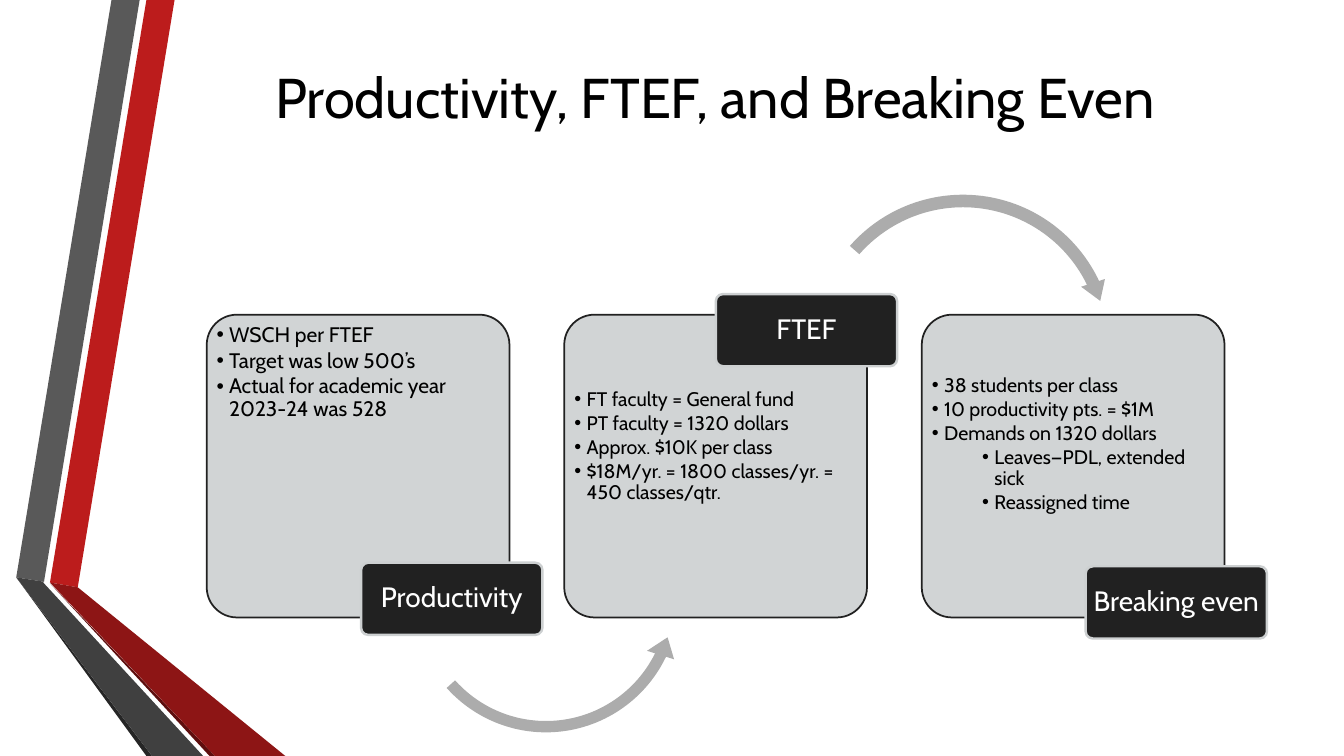
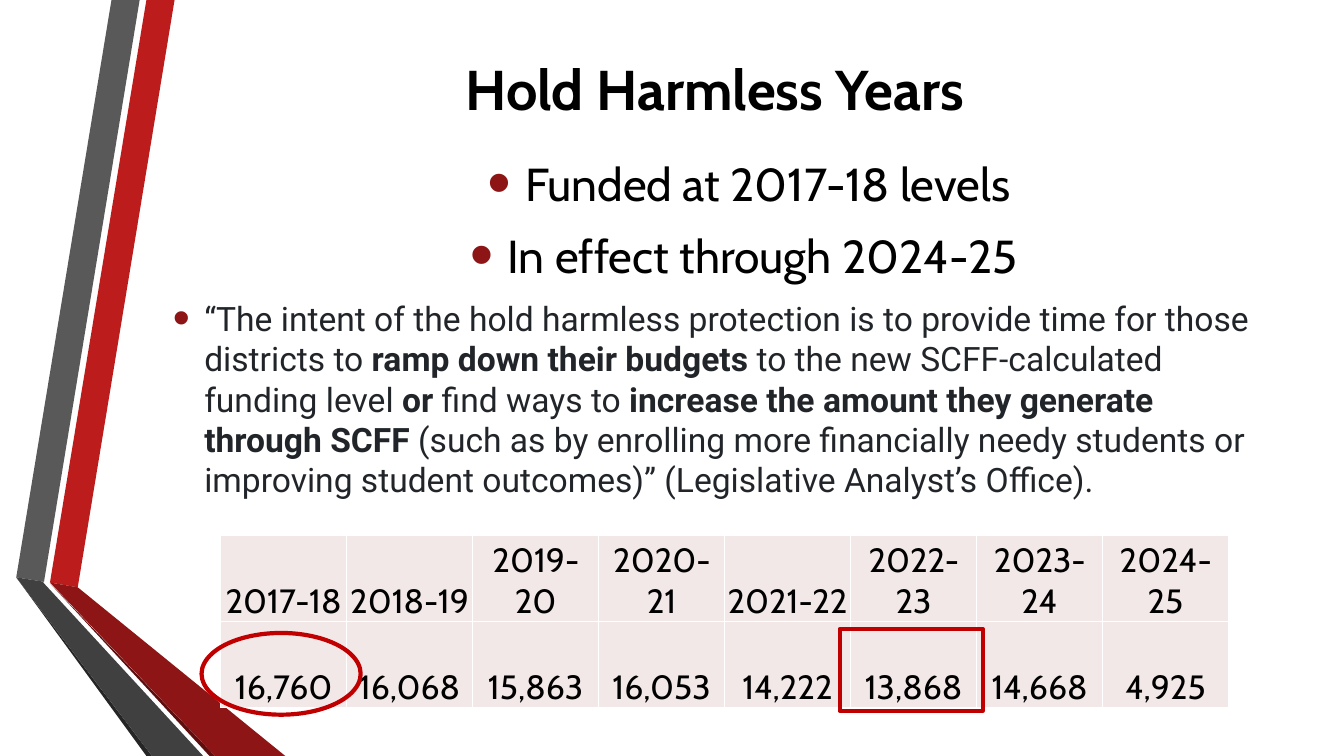
from dataclasses import dataclass
from typing import Any

import pptx
import pptx.dml.color
import pptx.enum.shapes
import pptx.enum.text
import pptx.oxml
import pptx.oxml.ns
import pptx.util

Cm = pptx.util.Cm
Pt = pptx.util.Pt
RGBColor = pptx.dml.color.RGBColor
Preset = pptx.enum.shapes.MSO_SHAPE
Align = pptx.enum.text.PP_ALIGN
Anchor = pptx.enum.text.MSO_ANCHOR

# Theme
BLACK = RGBColor(0x00, 0x00, 0x00)
WHITE = RGBColor(0xFF, 0xFF, 0xFF)
RED = RGBColor(0xBC, 0x1C, 0x1C)
MAROON = RGBColor(0x8D, 0x15, 0x15)
MAROON_EDGE = RGBColor(0x5E, 0x0E, 0x0E)
GREY = RGBColor(0x59, 0x59, 0x59)
CHARCOAL = RGBColor(0x40, 0x40, 0x40)
CHARCOAL_EDGE = RGBColor(0x26, 0x26, 0x26)
CARD_GREY = RGBColor(0xCD, 0xD0, 0xD1)
TAG_BLACK = RGBColor(0x21, 0x21, 0x21)
ARROW_GREY = RGBColor(0xAC, 0xAC, 0xAC)
QUOTE_INK = RGBColor(0x21, 0x25, 0x29)
CELL_PINK = RGBColor(0xF3, 0xE8, 0xE8)
MARK_RED = RGBColor(0xC0, 0x00, 0x00)
HEAD_FONT, QUOTE_FONT = "Cabin", "Roboto"

Box = tuple[float, float, float, float]  # left, top, width, height in cm


@dataclass(frozen=True)
class Band:
    color: RGBColor
    points: list[tuple[float, float]]


@dataclass(frozen=True)
class Card:
    label: str
    tag_left: float
    tag_top: float
    size: float
    inset_top: float
    lines: list[tuple[int, str]]  # indent level, text


@dataclass(frozen=True)
class Arrow:
    preset: Any
    box: Box
    adjustments: list[float]


BANDS = [
    Band(RED, [(1.26, 14.68), (1.96, 14.8), (4.4, 0), (3.69, 0)]),
    Band(GREY, [(3.52, 0), (2.81, 0), (0.41, 14.55), (1.11, 14.66)]),
    Band(CHARCOAL_EDGE, [(0.41, 14.55), (3.69, 19.05), (3.83, 19.05)]),
    Band(MAROON_EDGE, [(1.26, 14.7), (5.28, 19.05), (5.42, 19.05)]),
    Band(MAROON, [(1.26, 14.68), (5.42, 19.05), (7.19, 19.05), (1.96, 14.8)]),
    Band(CHARCOAL, [(5.12, 19.05), (1.22, 14.82), (1.09, 14.68), (1.11, 14.66),
                    (0.41, 14.55), (3.83, 19.05)]),
]

CARD_LEFT, CARD_TOP, CARD_SIZE, CARD_PITCH = 5.21, 7.93, 7.63, 9.01
TAG_WIDTH, TAG_HEIGHT = 4.57, 1.82
CARDS = [
    Card("Productivity", 9.1, 14.18, 15, 0.03, [
        (0, "WSCH per FTEF"),
        (0, "Target was low 500’s"),
        (0, "Actual for academic year 2023-24 was 528"),
    ]),
    Card("FTEF", 18.04, 7.41, 14, 1.66, [
        (0, "FT faculty = General fund"),
        (0, "PT faculty = 1320 dollars"),
        (0, "Approx. $10K per class"),
        (0, "$18M/yr. = 1800 classes/yr. = 450 classes/qtr."),
    ]),
    Card("Breaking even", 27.36, 14.27, 14, 1.3, [
        (0, "38 students per class"),
        (0, "10 productivity pts. = $1M"),
        (0, "Demands on 1320 dollars"),
        (1, "Leaves—PDL, extended sick"),
        (1, "Reassigned time"),
    ]),
]
ARROWS = [
    Arrow(Preset.LEFT_CIRCULAR_ARROW, (10.19, 11.53, 7.14, 7.14),
          [0.04, 5.15, 15.59, 82.93, 0.05]),
    Arrow(Preset.CIRCULAR_ARROW, (20.32, 4.75, 7.9, 7.9),
          [0.04, 4.62, 200.64, 132.76, 0.04]),
]

FUNDING_LINES = ["Funded at 2017-18 levels", "In effect through 2024-25 "]
QUOTE = [  # text, bold
    ("“The intent of the hold harmless protection is to provide time for those districts to ", False),
    ("ramp down their budgets ", True),
    ("to the new SCFF‑calculated funding level ", False),
    ("or ", True),
    ("find ways to ", False),
    ("increase the amount they generate through SCFF ", True),
    ("(such as by enrolling more financially needy students or improving student outcomes)” "
     "(Legislative Analyst’s Office).", False),
]
YEARS = [
    ["2017-18", "2018-19", "2019-20", "2020-21", "2021-22", "2022-23", "2023-24", "2024-25"],
    ["16,760", "16,068", "15,863", "16,053", "14,222", "13,868", "14,668", "4,925"],
]


def place(box: Box) -> list[pptx.util.Length]:
    return [Cm(value) for value in box]


def add_xml(parent: Any, tag: str, body: str = "", **attributes: Any) -> None:
    """Append one drawing element with its attributes and inner XML."""
    pairs = " ".join(f'{key}="{value}"' for key, value in attributes.items())
    namespace = pptx.oxml.ns.nsdecls("a")
    parent.append(pptx.oxml.parse_xml(f"<a:{tag} {namespace} {pairs}>{body}</a:{tag}>"))


def set_frame(frame: Any, margins: Box, anchor: Any) -> None:
    frame.word_wrap = True
    frame.vertical_anchor = anchor
    (frame.margin_left, frame.margin_top,
     frame.margin_right, frame.margin_bottom) = place(margins)


def write(frame: Any, text: str | list[tuple[str, bool]], *, size: float,
          color: RGBColor = BLACK, font: str = HEAD_FONT, bold: bool = False,
          align: Any = Align.LEFT, line: float = 1.0, before: float = 0,
          after: float = 0, indent: float = 0, hang: float = 0,
          bullet_color: RGBColor | None = None, bullet_percent: int = 100) -> None:
    """Add a paragraph; a hanging indent gives it a bullet."""
    para = frame.paragraphs[0]
    if para.runs:
        para = frame.add_paragraph()
    para.alignment, para.line_spacing = align, line
    para.space_before, para.space_after = Pt(before), Pt(after)
    if hang:
        properties = para._p.get_or_add_pPr()
        properties.set("marL", str(Cm(indent)))
        properties.set("indent", str(Cm(-hang)))
        add_xml(properties, "buClr", f'<a:srgbClr val="{bullet_color or color}"/>')
        add_xml(properties, "buSzPct", val=bullet_percent * 1000)
        add_xml(properties, "buFont", typeface="Arial")
        add_xml(properties, "buChar", char="•")
    for words, strong in [(text, bold)] if isinstance(text, str) else text:
        span = para.add_run()
        span.text = words
        span.font.name, span.font.size, span.font.bold = font, Pt(size), strong
        span.font.color.rgb = color


def paint(shape: Any, fill: RGBColor | None, line: RGBColor | None = None,
          width: float = 0) -> None:
    shape.shadow.inherit = False
    if fill is None:
        shape.fill.background()
    else:
        shape.fill.solid()
        shape.fill.fore_color.rgb = fill
    if line is None:
        shape.line.fill.background()
    else:
        shape.line.color.rgb = line
        shape.line.width = Pt(width)


def add_shape(page: Any, preset: Any, box: Box, fill: RGBColor | None,
              line: RGBColor | None = None, width: float = 0,
              adjustments: list[float] | None = None) -> Any:
    shape = page.shapes.add_shape(preset, *place(box))
    for index, value in enumerate(adjustments or []):
        shape.adjustments[index] = value
    paint(shape, fill, line, width)
    return shape


def add_page(deck: Any, title: str, top: float, bold: bool = False) -> Any:
    """Blank page with the folded ribbon and a centred title."""
    page = deck.slides.add_slide(deck.slide_layouts[6])
    for band in BANDS:
        start, *rest = [(Cm(x), Cm(y)) for x, y in band.points]
        outline = page.shapes.build_freeform(*start)
        outline.add_line_segments(rest, close=True)
        paint(outline.convert_to_shape(), band.color)
    box = page.shapes.add_textbox(*place((4.11, top, 27.81, 3.18)))
    set_frame(box.text_frame, (0.25, 0.13, 0.25, 0.13), Anchor.MIDDLE)
    write(box.text_frame, title, size=40, bold=bold, align=Align.CENTER)
    return page


def add_card(page: Any, card: Card, column: int) -> None:
    left = CARD_LEFT + column * CARD_PITCH
    panel = add_shape(page, Preset.ROUNDED_RECTANGLE, (left, CARD_TOP, CARD_SIZE, CARD_SIZE),
                      CARD_GREY, TAG_BLACK, 1.25, [0.1])
    add_xml(panel._element.spPr.find("./" + pptx.oxml.ns.qn("a:solidFill"))[0],
            "alpha", val=90000)
    set_frame(panel.text_frame, (0.03, card.inset_top, 0.03, 0.03), Anchor.TOP)
    for level, text in card.lines:
        write(panel.text_frame, text, size=card.size, line=0.9, after=2,
              indent=0.31 + level * 1.27, hang=0.31)


def add_tag(page: Any, card: Card) -> None:
    tag = add_shape(page, Preset.ROUNDED_RECTANGLE,
                    (card.tag_left, card.tag_top, TAG_WIDTH, TAG_HEIGHT),
                    TAG_BLACK, CARD_GREY, 1.75, [0.1])
    set_frame(tag.text_frame, (0.1, 0.08, 0.1, 0.08), Anchor.MIDDLE)
    write(tag.text_frame, card.label, size=20, color=WHITE, align=Align.CENTER, line=0.9)


def add_year_table(page: Any, box: Box) -> None:
    rows, columns = len(YEARS), len(YEARS[0])
    table = page.shapes.add_table(rows, columns, *place(box)).table
    table.first_row = table.horz_banding = False
    for cell, text in zip(table.iter_cells(), sum(YEARS, [])):
        for side in ("lnL", "lnR", "lnT", "lnB"):
            add_xml(cell._tc.get_or_add_tcPr(), side,
                    f'<a:solidFill><a:srgbClr val="{WHITE}"/></a:solidFill>', w=Pt(1))
        cell.fill.solid()
        cell.fill.fore_color.rgb = CELL_PINK
        cell.vertical_anchor = Anchor.BOTTOM
        cell.margin_left = cell.margin_right = cell.margin_top = Cm(0.02)
        cell.margin_bottom = Cm(0)
        write(cell.text_frame, text, size=24, align=Align.CENTER)


def build_productivity(deck: Any) -> None:
    page = add_page(deck, "Productivity, FTEF, and Breaking Even", 0.84)
    for column, card in enumerate(CARDS):
        add_card(page, card, column)
        if column < len(ARROWS):
            arrow = ARROWS[column]
            add_shape(page, arrow.preset, arrow.box, ARROW_GREY,
                      adjustments=arrow.adjustments)
        add_tag(page, card)


def build_hold_harmless(deck: Any) -> None:
    page = add_page(deck, "Hold Harmless Years", 0.64, bold=True)

    # Funding terms and quotation
    body = page.shapes.add_textbox(*place((4.11, 3.38, 28.27, 9.73))).text_frame
    set_frame(body, (0.25, 0.13, 0.25, 0.13), Anchor.MIDDLE)
    bullet = {"bullet_color": MAROON, "bullet_percent": 145, "after": 6}
    for text in FUNDING_LINES:
        write(body, text, size=33, align=Align.CENTER, before=6,
              indent=2.21, hang=0.95, **bullet)
    write(body, QUOTE, size=24, color=QUOTE_INK, font=QUOTE_FONT, before=5,
          indent=0.79, hang=0.79, **bullet)

    # Yearly figures with two of them marked
    add_year_table(page, (5.56, 13.49, 25.4, 4.34))
    add_shape(page, Preset.OVAL, (5.08, 15.95, 4.01, 2.06), None, MARK_RED, 3)
    add_shape(page, Preset.RECTANGLE, (21.16, 15.85, 3.61, 2.06), None, MARK_RED, 3)


def main() -> None:
    deck = pptx.Presentation()
    deck.slide_width, deck.slide_height = Cm(33.87), Cm(19.05)
    build_productivity(deck)
    build_hold_harmless(deck)
    deck.save("out.pptx")


if __name__ == "__main__":
    main()
